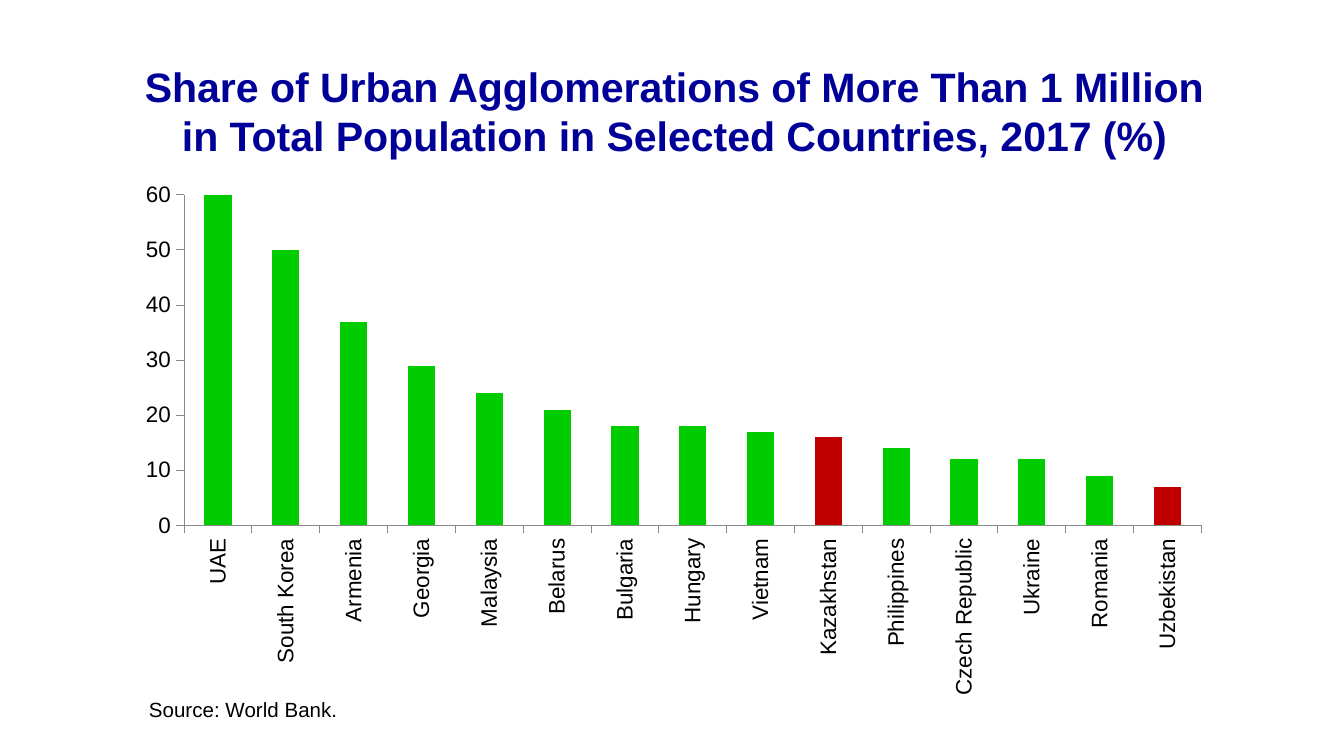
from lxml import etree
from pptx import Presentation
from pptx.chart.data import CategoryChartData
from pptx.dml.color import RGBColor
from pptx.enum.chart import XL_CHART_TYPE, XL_TICK_MARK
from pptx.enum.text import MSO_ANCHOR, MSO_AUTO_SIZE, PP_ALIGN
from pptx.oxml import parse_xml
from pptx.oxml.ns import nsdecls, qn
from pptx.util import Inches, Pt

URBAN_SHARES = {
    "UAE": 60,
    "South Korea": 50,
    "Armenia": 37,
    "Georgia": 29,
    "Malaysia": 24,
    "Belarus": 21,
    "Bulgaria": 18,
    "Hungary": 18,
    "Vietnam": 17,
    "Kazakhstan": 16,
    "Philippines": 14,
    "Czech Republic": 12,
    "Ukraine": 12,
    "Romania": 9,
    "Uzbekistan": 7,
}
HIGHLIGHTED = ("Kazakhstan", "Uzbekistan")


def color(value):
    return RGBColor.from_string(value)


def format_font(font, size, hue, bold=False):
    font.name = "Arial"
    font.size = Pt(size)
    font.bold = bold
    font.color.rgb = color(hue)


def write_text(frame, lines, size, hue, bold=False, align=PP_ALIGN.LEFT):
    frame.word_wrap = True
    frame.auto_size = MSO_AUTO_SIZE.NONE
    frame.vertical_anchor = MSO_ANCHOR.MIDDLE
    for index, line in enumerate(lines):
        paragraph = frame.paragraphs[0] if index == 0 else frame.add_paragraph()
        paragraph.alignment = align
        run = paragraph.add_run()
        run.text = line
        format_font(run.font, size, hue, bold)


class SlideBuilder:
    title_color = "000099"
    text_color = "000000"
    bar_color = "00CC00"
    highlight_color = "C00000"
    axis_color = "888888"

    def __init__(self, slide):
        self.slide = slide

    def add_title(self, lines, left, top, width, height):
        title = self.slide.shapes.title
        title.left, title.top = Inches(left), Inches(top)
        title.width, title.height = Inches(width), Inches(height)
        write_text(title.text_frame, lines, 22, self.title_color, bold=True, align=PP_ALIGN.CENTER)

    def add_source(self, text, left, top, width, height):
        box = self.slide.shapes.add_textbox(Inches(left), Inches(top), Inches(width), Inches(height))
        write_text(box.text_frame, [text], 11, self.text_color)

    def add_column_chart(self, shares, highlighted, left, top, width, height):
        data = CategoryChartData(number_format="0")
        data.categories = list(shares)
        data.add_series("Series 1", list(shares.values()))
        frame = self.slide.shapes.add_chart(
            XL_CHART_TYPE.COLUMN_CLUSTERED,
            Inches(left), Inches(top), Inches(width), Inches(height), data,
        )
        chart = frame.chart
        chart.has_legend = False
        chart.has_title = False
        format_font(chart.font, 12, self.text_color)
        plot = chart.plots[0]
        plot.gap_width = 150
        plot.vary_by_categories = False
        self.color_bars(plot.series[0], list(shares), highlighted)
        for axis in (chart.category_axis, chart.value_axis):
            axis.has_major_gridlines = False
            axis.major_tick_mark = XL_TICK_MARK.OUTSIDE
            axis.minor_tick_mark = XL_TICK_MARK.NONE
            axis.format.line.color.rgb = color(self.axis_color)
            axis.format.line.width = Pt(0.5)
            format_font(axis.tick_labels.font, 12, self.text_color)
        chart.value_axis.minimum_scale = 0
        chart.value_axis.maximum_scale = 60
        chart.value_axis.major_unit = 10
        chart.value_axis.tick_labels.number_format = "0"
        chart.value_axis.tick_labels.number_format_is_linked = False
        label_body = chart.category_axis._element.find(qn("c:txPr")).find(qn("a:bodyPr"))
        label_body.set("rot", "-5400000")
        label_body.set("vert", "horz")
        self.place_plot(chart, 0.44 / width, 0.17 / height, 7.57 / width, 2.46 / height)

    def color_bars(self, series, names, highlighted):
        series.format.fill.solid()
        series.format.fill.fore_color.rgb = color(self.bar_color)
        series.invert_if_negative = False
        for name in highlighted:
            fill = series.points[names.index(name)].format.fill
            fill.solid()
            fill.fore_color.rgb = color(self.highlight_color)

    def place_plot(self, chart, x, y, w, h):
        plot_area = chart._chartSpace.chart.plotArea
        for existing in plot_area.findall(qn("c:layout")):
            plot_area.remove(existing)
        layout = parse_xml(f"<c:layout {nsdecls('c')}><c:manualLayout/></c:layout>")
        settings = {
            "layoutTarget": "inner", "xMode": "edge", "yMode": "edge",
            "x": x, "y": y, "w": w, "h": h,
        }
        for tag, value in settings.items():
            etree.SubElement(layout[0], qn(f"c:{tag}")).set("val", str(value))
        plot_area.insert(0, layout)


def main():
    presentation = Presentation()
    presentation.slide_width = Inches(10)
    presentation.slide_height = Inches(10 * 9 / 16)
    builder = SlideBuilder(presentation.slides.add_slide(presentation.slide_layouts[5]))
    builder.add_title(
        [
            "Share of Urban Agglomerations of More Than 1 Million",
            "in Total Population in Selected Countries, 2017 (%)",
        ],
        0.93, 0.45, 8.18, 0.74,
    )
    builder.add_source("Source: World Bank.", 1.01, 5.11, 8.02, 0.34)
    builder.add_column_chart(URBAN_SHARES, HIGHLIGHTED, 0.93, 1.28, 8.18, 3.97)
    presentation.save("out.pptx")


if __name__ == "__main__":
    main()
